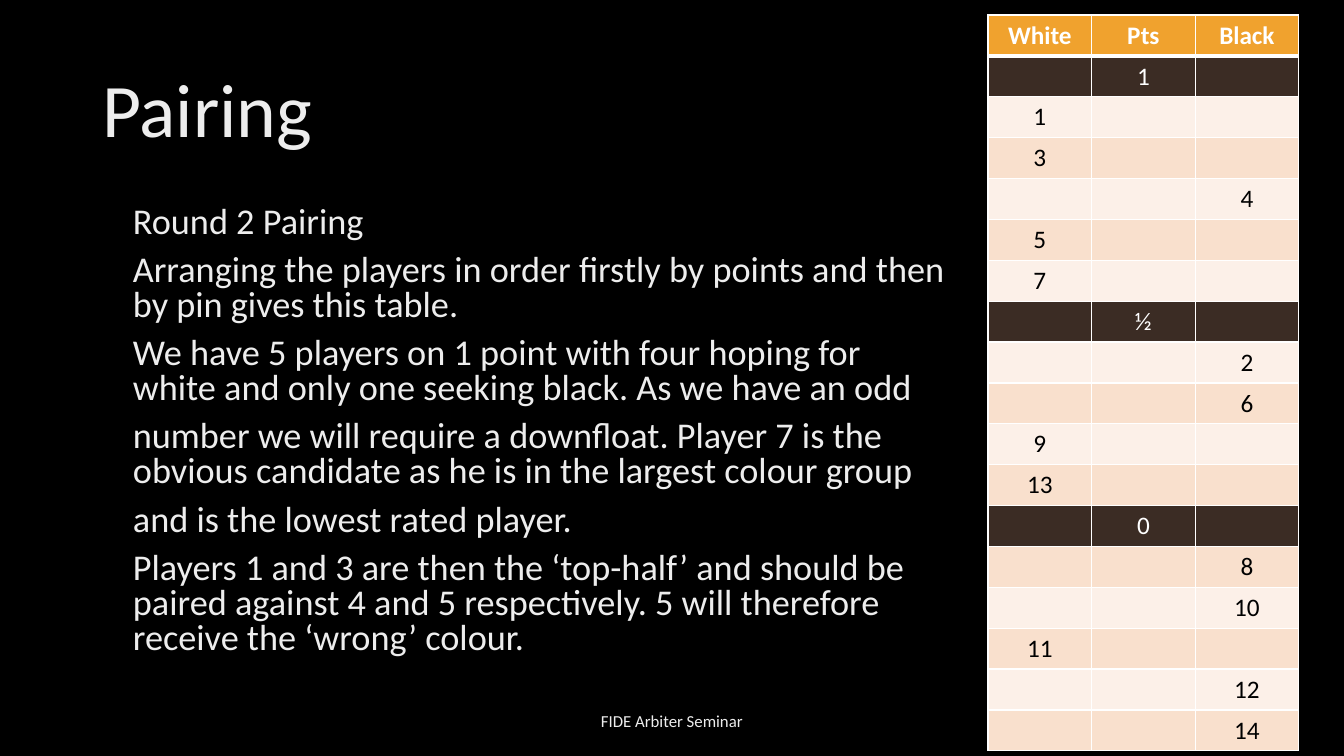
from typing import NamedTuple

from lxml import etree
from pptx import Presentation
from pptx.dml.color import RGBColor
from pptx.enum.text import MSO_ANCHOR, PP_ALIGN
from pptx.oxml.ns import qn
from pptx.util import Cm, Pt

LEFT, CENTER = PP_ALIGN.LEFT, PP_ALIGN.CENTER
TOP, MIDDLE = MSO_ANCHOR.TOP, MSO_ANCHOR.MIDDLE

FONT = "Calibri"
COLORS = {
    "background": "000000",
    "text": "EDEDED",
    "header": "F0A22E",
    "score": "3B2C24",
    "light": "FCF0E8",
    "dark": "F9E0CD",
    "white": "FFFFFF",
    "black": "000000",
}


class TextBlock(NamedTuple):
    left: float
    top: float
    width: float
    height: float
    paragraphs: list[str]
    size: float
    align: PP_ALIGN = LEFT
    anchor: MSO_ANCHOR = MIDDLE
    line_spacing: float = 1.0
    space_before: float = 0


class ScoreGroup(NamedTuple):
    points: str
    players: list[tuple[str, str]]  # (seeking white, seeking black)


TEXT_BLOCKS = [
    TextBlock(2.33, 1.01, 29.21, 3.68, ["Pairing"], 54, line_spacing=0.9),
    TextBlock(3.1, 5.08, 21.08, 12.09, [
        "Round 2 Pairing",
        "Arranging the players in order firstly by points and then by pin gives this table.",
        "We have 5 players on 1 point with four hoping for white and only one seeking black. "
        "As we have an odd",
        "number we will require a downfloat. Player 7 is the obvious candidate as he is in "
        "the largest colour group",
        "and is the lowest rated player.",
        "Players 1 and 3 are then the ‘top-half’ and should be paired against 4 and 5 "
        "respectively. 5 will therefore receive the ‘wrong’ colour.",
    ], 25.9, anchor=TOP, line_spacing=0.8, space_before=9.6),
    TextBlock(11.22, 17.65, 11.43, 1.02, ["FIDE Arbiter Seminar"], 12, align=CENTER),
]

HEADERS = ("White", "Pts", "Black")
SCORE_GROUPS = [
    ScoreGroup("1", [("1", ""), ("3", ""), ("", "4"), ("5", ""), ("7", "")]),
    ScoreGroup("½", [("", "2"), ("", "6"), ("9", ""), ("13", "")]),
    ScoreGroup("0", [("", "8"), ("", "10"), ("11", ""), ("", "12"), ("", "14")]),
]
TABLE_LEFT, TABLE_TOP = 24.9, 0.38
COLUMN_WIDTH, ROW_HEIGHT = 2.61, 1.03


def rgb(name: str) -> RGBColor:
    return RGBColor.from_string(COLORS[name])


def write_paragraph(paragraph, text: str, *, size: float, color: str,
                    align: PP_ALIGN = LEFT, bold: bool = False) -> None:
    paragraph.alignment = align
    run = paragraph.add_run()
    run.text = text
    run.font.name = FONT
    run.font.size = Pt(size)
    run.font.bold = bold
    run.font.color.rgb = rgb(color)


def add_text_block(slide, block: TextBlock) -> None:
    shape = slide.shapes.add_textbox(
        Cm(block.left), Cm(block.top), Cm(block.width), Cm(block.height))
    frame = shape.text_frame
    frame.word_wrap = True
    frame.vertical_anchor = block.anchor
    for index, text in enumerate(block.paragraphs):
        paragraph = frame.add_paragraph() if index else frame.paragraphs[0]
        paragraph.line_spacing = block.line_spacing
        if index:
            paragraph.space_before = Pt(block.space_before)
        write_paragraph(paragraph, text, size=block.size, color="text", align=block.align)


def set_borders(cell, bottom_width: float) -> None:
    properties = cell._tc.get_or_add_tcPr()
    widths = {"a:lnL": 1, "a:lnR": 1, "a:lnT": 1, "a:lnB": bottom_width}
    for position, (tag, width) in enumerate(widths.items()):
        line = etree.Element(qn(tag), w=str(Pt(width)))
        fill = etree.SubElement(line, qn("a:solidFill"))
        etree.SubElement(fill, qn("a:srgbClr"), val=COLORS["white"])
        properties.insert(position, line)


def fill_row(table, row: int, texts: tuple[str, ...], *, fill: str, color: str,
             bold: bool = False, bottom_width: float = 1) -> None:
    table.rows[row].height = Cm(ROW_HEIGHT)
    for column, text in enumerate(texts):
        cell = table.cell(row, column)
        cell.fill.solid()
        cell.fill.fore_color.rgb = rgb(fill)
        set_borders(cell, bottom_width)
        if text:
            write_paragraph(cell.text_frame.paragraphs[0], text, size=18, color=color,
                            align=CENTER, bold=bold)


def add_pairing_table(slide) -> None:
    row_count = 1 + sum(1 + len(group.players) for group in SCORE_GROUPS)
    table = slide.shapes.add_table(
        row_count, len(HEADERS), Cm(TABLE_LEFT), Cm(TABLE_TOP),
        Cm(COLUMN_WIDTH * len(HEADERS)), Cm(ROW_HEIGHT * row_count)).table
    for column in table.columns:
        column.width = Cm(COLUMN_WIDTH)

    fill_row(table, 0, HEADERS, fill="header", color="white", bold=True, bottom_width=3)
    row = 1
    for group in SCORE_GROUPS:
        fill_row(table, row, ("", group.points, ""), fill="score", color="white")
        row += 1
        for white, black in group.players:
            stripe = "dark" if row % 2 else "light"
            fill_row(table, row, (white, "", black), fill=stripe, color="black")
            row += 1


def main() -> None:
    presentation = Presentation()
    presentation.slide_width = Cm(33.87)
    presentation.slide_height = Cm(19.05)
    slide = presentation.slides.add_slide(presentation.slide_layouts[6])
    slide.background.fill.solid()
    slide.background.fill.fore_color.rgb = rgb("background")

    # Title, explanation and footer
    for block in TEXT_BLOCKS:
        add_text_block(slide, block)

    # Players by score group
    add_pairing_table(slide)

    presentation.save("out.pptx")


if __name__ == "__main__":
    main()
